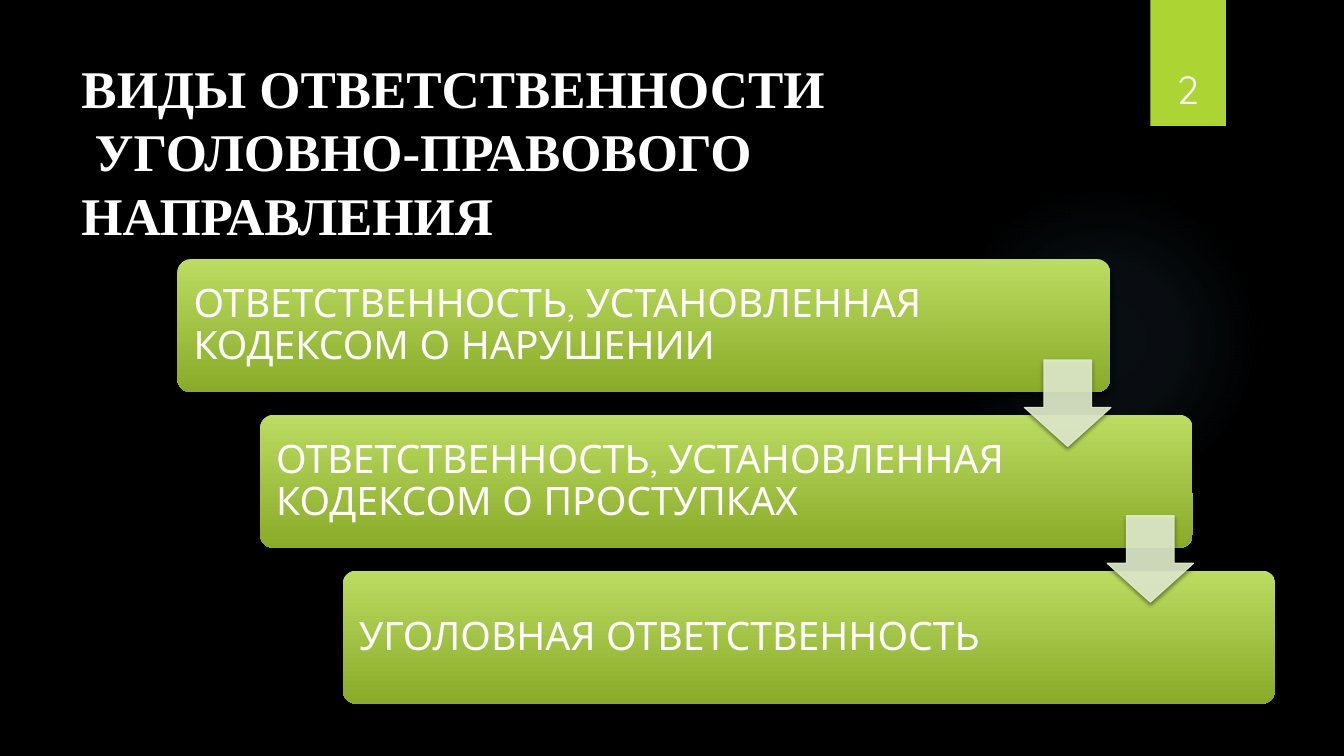
from dataclasses import dataclass

from lxml import etree
from pptx import Presentation
from pptx.dml.color import RGBColor
from pptx.enum.shapes import MSO_SHAPE
from pptx.enum.text import MSO_ANCHOR, PP_ALIGN
from pptx.oxml import parse_xml
from pptx.oxml.ns import nsdecls, qn
from pptx.util import Inches, Pt

ELLIPSE, RECT = MSO_SHAPE.OVAL, MSO_SHAPE.RECTANGLE
ROUNDED, DOWN_ARROW = MSO_SHAPE.ROUNDED_RECTANGLE, MSO_SHAPE.DOWN_ARROW
TOP, MIDDLE, BOTTOM = MSO_ANCHOR.TOP, MSO_ANCHOR.MIDDLE, MSO_ANCHOR.BOTTOM
LEFT, CENTER = PP_ALIGN.LEFT, PP_ALIGN.CENTER


@dataclass(frozen=True)
class Theme:
    background: str = "000000"
    text: str = "FFFFFF"
    accent: str = "ACD433"
    step_top: str = "BCDC62"
    step_bottom: str = "8AAA29"
    arrow: str = "E3EFCE"
    glow: str = "7AC4F0"
    title_font: str = "Times New Roman"
    body_font: str = "Quicksand"
    title_size: float = 37.8
    body_size: float = 28


@dataclass(frozen=True)
class Box:
    left: float
    top: float
    width: float
    height: float

    def inches(self) -> tuple:
        return tuple(Inches(v) for v in (self.left, self.top, self.width, self.height))


@dataclass(frozen=True)
class Step:
    text: str
    text_width: float


@dataclass(frozen=True)
class Shadow:
    alpha: int
    blur: float
    distance: float


THEME = Theme()
SOFT_SHADOW = Shadow(45, 3, 2)
STEP_SHADOW = Shadow(60, 5, 3)
STEPS = [
    Step("ОТВЕТСТВЕННОСТЬ, УСТАНОВЛЕННАЯ КОДЕКСОМ О НАРУШЕНИИ", 7.83),
    Step("ОТВЕТСТВЕННОСТЬ, УСТАНОВЛЕННАЯ КОДЕКСОМ О ПРОСТУПКАХ", 7.5),
    Step("УГОЛОВНАЯ ОТВЕТСТВЕННОСТЬ", 7.5),
]
FIRST_STEP = Box(1.76, 2.57, 9.25, 1.32)
FIRST_ARROW = Box(10.16, 3.57, 0.86, 0.86)
STEP_DX, STEP_DY = 0.82, 1.545


def add_alpha(color, percent: int) -> None:
    etree.SubElement(color, qn("a:alpha"), val=str(percent * 1000))


def add_shape(slide, kind, box: Box, color: str, adjustments: tuple = ()):
    s = slide.shapes.add_shape(kind, *box.inches())
    s.shadow.inherit = False
    s.fill.solid()
    s.fill.fore_color.rgb = RGBColor.from_string(color)
    s.line.fill.background()
    for i, value in enumerate(adjustments):
        s.adjustments[i] = value
    return s


def set_gradient(s, stops: list, direction: str) -> None:
    """Replace the solid fill; stops are (position, colour, opacity)."""
    fill = parse_xml(f'<a:gradFill {nsdecls("a")} rotWithShape="1"><a:gsLst/>{direction}</a:gradFill>')
    for position, color, alpha in stops:
        gs = etree.SubElement(fill[0], qn("a:gs"), pos=str(position * 1000))
        clr = etree.SubElement(gs, qn("a:srgbClr"), val=color)
        if alpha < 100:
            add_alpha(clr, alpha)
    solid = s._element.spPr.find(qn("a:solidFill"))
    solid.getparent().replace(solid, fill)


def add_shadow(s, shadow: Shadow) -> None:
    effects = s._element.spPr.find(qn("a:effectLst"))
    outer = etree.SubElement(
        effects, qn("a:outerShdw"), blurRad=str(Pt(shadow.blur)),
        dist=str(Pt(shadow.distance)), dir="5400000", algn="ctr", rotWithShape="0")
    add_alpha(etree.SubElement(outer, qn("a:srgbClr"), val="000000"), shadow.alpha)


def add_text(slide, box: Box, text: str, font: str, size: float, bold: bool = False,
             anchor=TOP, align=LEFT, inset: tuple = (0.1, 0.05), spacing: float = 1.0) -> None:
    tf = slide.shapes.add_textbox(*box.inches()).text_frame
    tf.word_wrap = True
    tf.vertical_anchor = anchor
    tf.margin_left = tf.margin_right = Inches(inset[0])
    tf.margin_top = tf.margin_bottom = Inches(inset[1])
    tf.text = text
    p = tf.paragraphs[0]
    p.alignment = align
    p.line_spacing = spacing
    for r in p.runs:
        r.font.name, r.font.size, r.font.bold = font, Pt(size), bold
        r.font.color.rgb = RGBColor.from_string(THEME.text)


def add_step(slide, step: Step, index: int) -> None:
    left = FIRST_STEP.left + index * STEP_DX
    top = FIRST_STEP.top + index * STEP_DY
    s = add_shape(slide, ROUNDED, Box(left, top, FIRST_STEP.width, FIRST_STEP.height),
                  THEME.step_top, (0.1,))
    set_gradient(s, [(0, THEME.step_top, 100), (100, THEME.step_bottom, 100)],
                 '<a:lin ang="5400000" scaled="0"/>')
    add_shadow(s, STEP_SHADOW)
    add_text(slide, Box(left + 0.04, top + 0.04, step.text_width, 1.25), step.text,
             THEME.body_font, THEME.body_size, anchor=MIDDLE, inset=(0.12, 0.12), spacing=0.9)


def add_arrow(slide, index: int) -> None:
    box = Box(FIRST_ARROW.left + index * STEP_DX, FIRST_ARROW.top + index * STEP_DY,
              FIRST_ARROW.width, FIRST_ARROW.height)
    s = add_shape(slide, DOWN_ARROW, box, THEME.arrow, (0.55, 0.45))
    s.line.color.rgb = RGBColor.from_string(THEME.arrow)
    s.line.width = Pt(0.75)
    for color in s._element.spPr.iter(qn("a:srgbClr")):
        add_alpha(color, 90)
    add_shadow(s, SOFT_SHADOW)


def main() -> None:
    prs = Presentation()
    prs.slide_width, prs.slide_height = Inches(13.33), Inches(7.5)
    slide = prs.slides.add_slide(prs.slide_layouts[6])
    slide.background.fill.solid()
    slide.background.fill.fore_color.rgb = RGBColor.from_string(THEME.background)

    # Background glow
    glow = add_shape(slide, ELLIPSE, Box(9.41, 1.83, 3.08, 3.08), THEME.glow)
    set_gradient(glow, [(0, THEME.glow, 7), (36, THEME.glow, 6), (69, THEME.glow, 0)],
                 '<a:path path="circle"><a:fillToRect l="50000" t="50000" r="50000" b="50000"/></a:path>')

    # Page number tab and title
    tab = add_shape(slide, RECT, Box(11.41, 0, 0.75, 1.25), THEME.accent)
    add_shadow(tab, SOFT_SHADOW)
    add_text(slide, Box(0.71, 0.5, 10.29, 1.53),
             "ВИДЫ ОТВЕТСТВЕННОСТИ\v УГОЛОВНО-ПРАВОВОГО НАПРАВЛЕНИЯ",
             THEME.title_font, THEME.title_size, bold=True)
    add_text(slide, Box(11.32, 0.32, 0.92, 0.84), "2", THEME.body_font, THEME.body_size,
             anchor=BOTTOM, align=CENTER)

    # Staircase of steps, then the arrows between them
    for i, step in enumerate(STEPS):
        add_step(slide, step, i)
    for i in range(len(STEPS) - 1):
        add_arrow(slide, i)

    prs.save("out.pptx")


if __name__ == "__main__":
    main()
